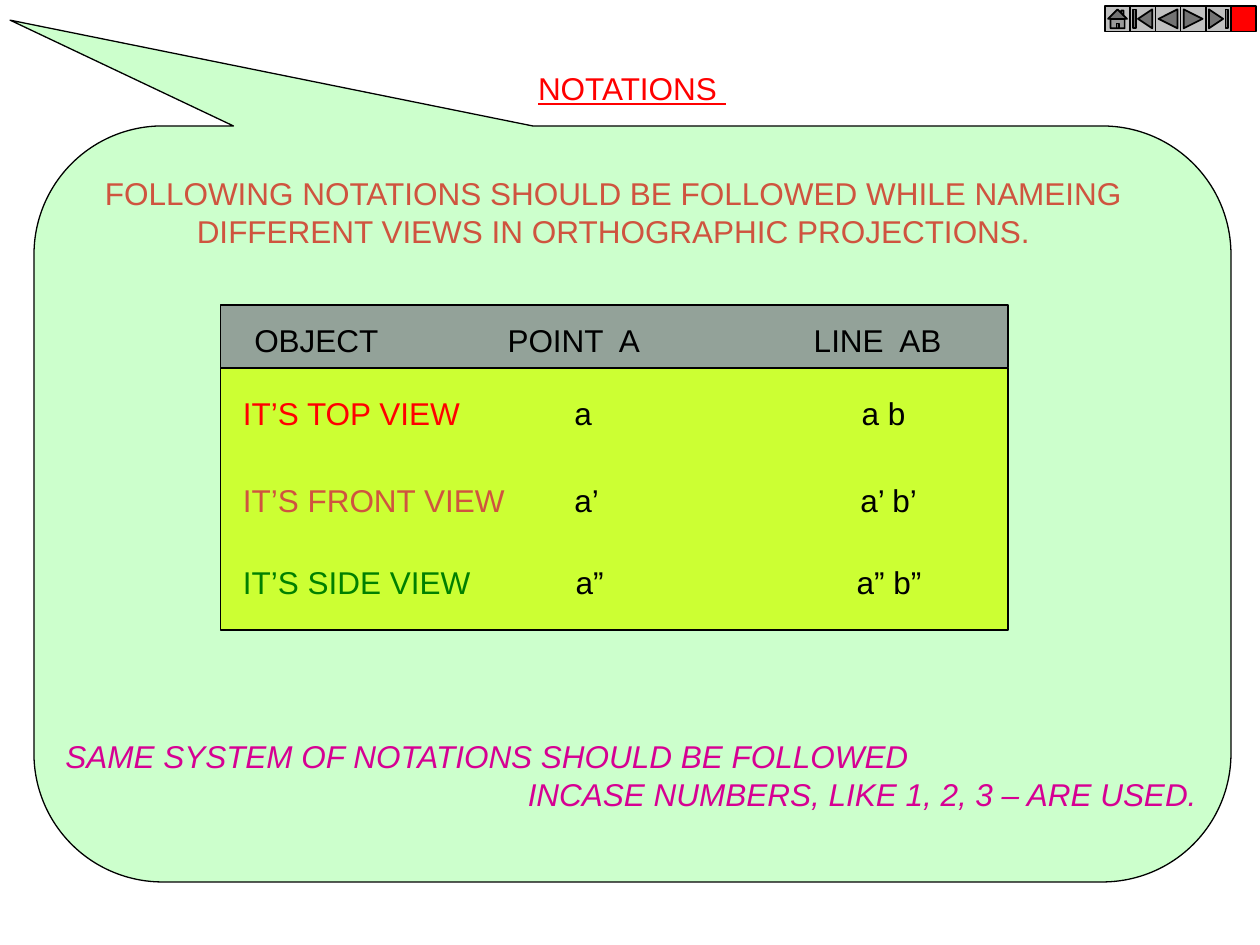
from lxml import etree
from pptx import Presentation
from pptx import util as u
from pptx.dml import color
from pptx.enum import shapes, text
from pptx.oxml import ns


def rgb(value):
    return color.RGBColor.from_string(value)


def write(shape, lines, tabs=(), align=text.PP_ALIGN.LEFT, italic=False, underline=False):
    frame = shape.text_frame
    frame.word_wrap = True
    frame.auto_size = text.MSO_AUTO_SIZE.NONE
    frame.vertical_anchor = text.MSO_ANCHOR.TOP
    for index, runs in enumerate(lines):
        paragraph = frame.add_paragraph() if index else frame.paragraphs[0]
        paragraph.alignment = align
        paragraph.line_spacing = 1.0
        paragraph.space_before = u.Pt(0)
        if tabs:
            tab_list = etree.SubElement(paragraph._p.get_or_add_pPr(), ns.qn("a:tabLst"))
            for position in tabs:
                etree.SubElement(tab_list, ns.qn("a:tab"), pos=str(u.Inches(position)), algn="l")
        for words, value in runs:
            run = paragraph.add_run()
            run.text = words
            run.font.name = "Arial"
            run.font.size = u.Pt(18)
            run.font.bold = False
            run.font.italic = italic
            run.font.underline = underline
            run.font.color.rgb = rgb(value)


presentation = Presentation()
presentation.slide_width = u.Inches(10)
presentation.slide_height = u.Inches(7.5)
slide = presentation.slides.add_slide(presentation.slide_layouts[5])

title = slide.shapes.title
title.left, title.top = u.Inches(4.17), u.Inches(0.5)
title.width, title.height = u.Inches(1.74), u.Inches(0.7)
write(title, [[("NOTATIONS ", "FF0000")]], underline=True)

kinds = shapes.MSO_SHAPE
panels = [
    (kinds.ROUNDED_RECTANGULAR_CALLOUT, 0.27, 1, 9.5, 6, "CCFFCC"),
    (kinds.RECTANGLE, 1.75, 2.92, 6.25, 2.08, "CCFF33"),
    (kinds.RECTANGLE, 1.75, 2.42, 6.25, 0.5, "93A299"),
]
for kind, left, top, width, height, fill in panels:
    panel = slide.shapes.add_shape(kind, *map(u.Inches, (left, top, width, height)))
    panel.shadow.inherit = False
    panel.fill.solid()
    panel.fill.fore_color.rgb = rgb(fill)
    panel.line.color.rgb = rgb("000000")
    panel.line.width = u.Pt(0.75)
    if kind == kinds.ROUNDED_RECTANGULAR_CALLOUT:
        for index, value in enumerate((-0.52, -0.64, 0.17)):
            panel.adjustments[index] = value

introduction = slide.shapes.add_textbox(*map(u.Inches, (0.65, 1.33, 8.44, 0.7)))
write(introduction, [
    [("FOLLOWING NOTATIONS SHOULD BE FOLLOWED WHILE NAMEING", "CF543F")],
    [("DIFFERENT VIEWS IN ORTHOGRAPHIC PROJECTIONS.", "CF543F")],
], align=text.PP_ALIGN.CENTER)

rows = [
    (1.92, 2.5, "OBJECT", "000000", "POINT  A", "LINE  AB", (2.01, 4.44)),
    (1.83, 3.08, "IT’S TOP VIEW", "FF0000", "a", "a b", (2.63, 4.91)),
    (1.83, 3.77, "IT’S FRONT VIEW", "CF543F", "a’", "a’ b’", (2.63, 4.9)),
    (1.83, 4.42, "IT’S SIDE VIEW", "008000", "a”", "a” b”", (2.64, 4.87)),
]
for left, top, label, label_color, point, line, tabs in rows:
    row = slide.shapes.add_textbox(*map(u.Inches, (left, top, 6, 0.4)))
    write(row, [[(label, label_color), (f"\t{point}\t{line}", "000000")]], tabs)

closing = slide.shapes.add_textbox(*map(u.Inches, (0.42, 5.8, 9.42, 0.7)))
write(closing, [
    [("SAME SYSTEM OF NOTATIONS SHOULD BE FOLLOWED", "D60093")],
    [("\tINCASE NUMBERS, LIKE 1, 2, 3 – ARE USED.", "D60093")],
], tabs=(3.67,), italic=True)

buttons = [
    (kinds.ACTION_BUTTON_HOME, "C0C0C0"),
    (kinds.ACTION_BUTTON_BEGINNING, "C0C0C0"),
    (kinds.ACTION_BUTTON_BACK_OR_PREVIOUS, "C0C0C0"),
    (kinds.ACTION_BUTTON_FORWARD_OR_NEXT, "C0C0C0"),
    (kinds.ACTION_BUTTON_END, "C0C0C0"),
    (kinds.ACTION_BUTTON_CUSTOM, "FF0000"),
]
navigation = slide.shapes.add_group_shape()
for index, (kind, fill) in enumerate(buttons):
    left = 8.77 + 0.2 * index
    button = navigation.shapes.add_shape(kind, *map(u.Inches, (left, 0.05, 0.2, 0.2)))
    button.shadow.inherit = False
    button.fill.solid()
    button.fill.fore_color.rgb = rgb(fill)
    button.line.color.rgb = rgb("000000")
    button.line.width = u.Pt(1)

presentation.save("out.pptx")
